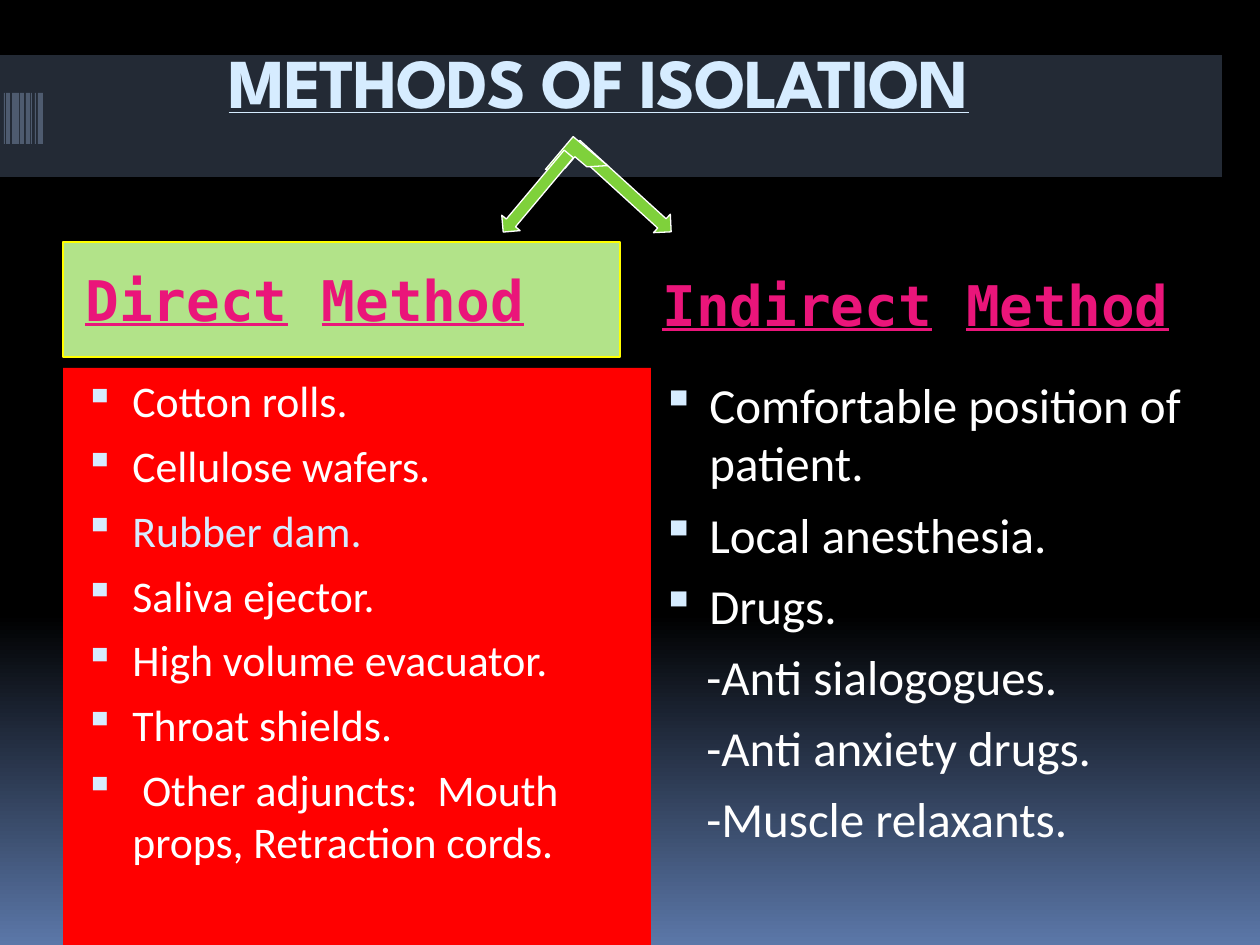
from pptx import Presentation
from pptx.dml.color import RGBColor
from pptx.enum.shapes import MSO_SHAPE
from pptx.enum.text import MSO_ANCHOR, PP_ALIGN
from pptx.oxml.ns import qn
from pptx.util import Pt
from lxml import etree

RECT, ARROW, HALF_FRAME = MSO_SHAPE.RECTANGLE, MSO_SHAPE.RIGHT_ARROW, MSO_SHAPE.HALF_FRAME
TOP, MIDDLE = MSO_ANCHOR.TOP, MSO_ANCHOR.MIDDLE
LEFT, CENTER = PP_ALIGN.LEFT, PP_ALIGN.CENTER
PX = 914400 / 126

THEME = {
    "night": "000000", "dusk": "5B77A8", "band": "586A86", "stripe": "4E5B6F",
    "ice": "D6ECFF", "white": "FFFFFF", "pink": "EA157A", "lime": "B2E389",
    "yellow": "FFFF00", "red": "FF0000", "green": "7FD13B",
    "title_font": "League Spartan", "heading_font": "DejaVu Sans Mono", "body_font": "Calibri",
    "title_size": 40, "heading_size": 32, "direct_size": 25, "indirect_size": 28,
}


def color(name):
    return RGBColor.from_string(THEME[name])


def write(frame, text, *, font, size, fill, bold=False, underline=False, align=LEFT,
          before=0, margin=0, indent=0, bullet=None, tracking=None):
    """Add one paragraph; text is a list of runs, and blank runs are not underlined."""
    paragraph = frame.paragraphs[0] if not frame.text else frame.add_paragraph()
    paragraph.alignment = align
    paragraph.space_before = Pt(before)
    props = paragraph._p.get_or_add_pPr()
    props.set("marL", str(round(margin * PX)))
    props.set("indent", str(round(indent * PX)))
    if bullet:
        bullet_color = etree.SubElement(props, qn("a:buClr"))
        etree.SubElement(bullet_color, qn("a:srgbClr"), val=THEME["ice"])
        etree.SubElement(props, qn("a:buSzPct"), val="95000")
        etree.SubElement(props, qn("a:buChar"), char=bullet)
    for part in text:
        run = paragraph.add_run()
        run.text = part
        run.font.name = THEME[font]
        run.font.size = Pt(THEME[size])
        run.font.color.rgb = color(fill)
        run.font.bold = bold
        run.font.underline = underline and bool(part.strip())
        if tracking:
            run.font._element.set("spc", str(tracking))


def add_box(slide, box, kind=None, fill=None, line=None, anchor=TOP):
    """Add a text box, or a preset shape when kind is given; box is in px."""
    frame = [round(value * PX) for value in box]
    if kind is None:
        shape = slide.shapes.add_textbox(*frame)
    else:
        shape = slide.shapes.add_shape(kind, *frame)
        shape.shadow.inherit = False
    if fill:
        shape.fill.solid()
        shape.fill.fore_color.rgb = color(fill)
    if line:
        shape.line.color.rgb = color(line)
        shape.line.width = Pt(0.75)
    else:
        shape.line.fill.background()
    shape.text_frame.word_wrap = True
    shape.text_frame.vertical_anchor = anchor
    return shape


prs = Presentation()
prs.slide_width, prs.slide_height = round(1260 * PX), round(945 * PX)
slide = prs.slides.add_slide(prs.slide_layouts[6])

# Background: black fading to blue at the bottom
backdrop = slide.background.fill
backdrop.gradient()
backdrop.gradient_angle = 270
for stop, position, name in zip(backdrop.gradient_stops, (0.65, 1), ("night", "dusk")):
    stop.position = position
    stop.color.rgb = color(name)

# Title band with barcode stripes
band = add_box(slide, (0, 55, 1222, 122), RECT, "band")
band_color = band.fill._xPr.find(qn("a:solidFill"))[0]
etree.SubElement(band_color, qn("a:alpha"), val="40000")
for left, width in ((4, 1), (6, 4), (12, 7), (20, 4), (26, 4), (31, 1), (35, 1), (38, 5)):
    add_box(slide, (left, 93, width, 51), RECT, "stripe")

# Title
title = add_box(slide, (32, 32, 1134, 147))
write(title.text_frame, ["METHODS OF ISOLATION"], font="title_font", size="title_size",
      fill="ice", bold=True, underline=True, align=CENTER, tracking=-100)

# Column headings
direct_heading = add_box(slide, (63, 242, 557, 115), fill="lime", line="yellow", anchor=MIDDLE)
indirect_heading = add_box(slide, (640, 252, 557, 105), anchor=MIDDLE)
for heading, word in ((direct_heading, "Direct"), (indirect_heading, "Indirect")):
    write(heading.text_frame, [word, " ", "Method"], font="heading_font", size="heading_size",
          fill="pink", bold=True, underline=True, before=7, margin=10)

# Method lists
direct_list = add_box(slide, (63, 368, 588, 577), fill="red")
indirect_list = add_box(slide, (640, 368, 557, 577))
direct_methods = ["Cotton rolls.", "Cellulose wafers.", "Rubber dam.", "Saliva ejector.",
                  "High volume evacuator.", "Throat shields.",
                  " Other adjuncts:  Mouth props, Retraction cords."]
indirect_methods = ["Comfortable position of patient.", "Local anesthesia.", "Drugs."]
for column, methods, size in ((direct_list, direct_methods, "direct_size"),
                              (indirect_list, indirect_methods, "indirect_size")):
    for method in methods:
        write(column.text_frame, [method], font="body_font", size=size,
              fill="ice" if method == "Rubber dam." else "white",
              before=7, margin=57, indent=-48, bullet="▪")
for drug in ("Anti sialogogues.", "Anti anxiety drugs.", "Muscle relaxants."):
    write(indirect_list.text_frame, ["-" + drug], font="body_font", size="indirect_size",
          fill="white", before=7, margin=54)

# Branching arrows from the title to the two headings
for kind, box, rotation in ((ARROW, (559, 176, 129, 25), 42.3),
                            (HALF_FRAME, (554, 146, 45, 43), 40.2),
                            (ARROW, (485, 181, 102, 24), 130)):
    branch = add_box(slide, box, kind, "green", "white")
    branch.rotation = rotation

prs.save("out.pptx")
